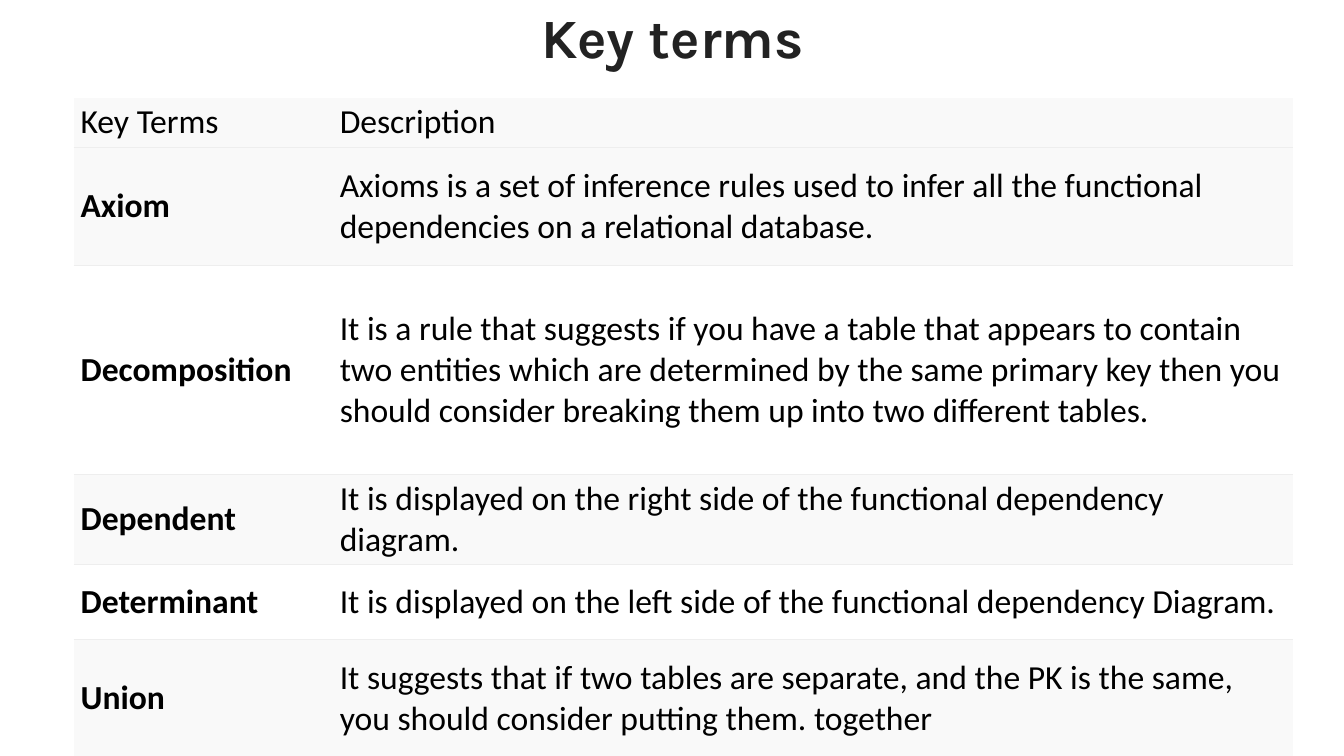
from lxml.etree import SubElement
from pptx import Presentation
from pptx.dml.color import RGBColor
from pptx.enum.text import MSO_ANCHOR, MSO_AUTO_SIZE, PP_ALIGN
from pptx.oxml import parse_xml
from pptx.oxml.ns import nsdecls, qn
from pptx.util import Inches, Pt

TITLE_COLOR = RGBColor(0x22, 0x22, 0x22)
TEXT_COLOR = RGBColor(0x00, 0x00, 0x00)
RULE_COLOR = RGBColor(0xEE, 0xEE, 0xEE)
SHADED = RGBColor(0xF9, 0xF9, 0xF9)
PLAIN = RGBColor(0xFF, 0xFF, 0xFF)

SLIDE_WIDTH, SLIDE_HEIGHT = 13.33, 7.5
TITLE_BOX = (0.92, 0.4, 11.5, 0.73)
TABLE_BOX = (0.73, 0.97, 12.09, 6.21)
TERM_SHARE = 0.2126  # share of the table's width
RULE_WIDTH = Pt(0.5)

# term, description, row height, fill
TERMS = [
    ("Key Terms", "Description", 0.3, SHADED),
    ("Axiom", "Axioms is a set of inference rules used to infer all the functional "
     "dependencies on a relational database.", 1.18, SHADED),
    ("Decomposition", "It is a rule that suggests if you have a table that appears to "
     "contain two entities which are determined by the same primary key then you should "
     "consider breaking them up into two different tables.", 2.07, PLAIN),
    ("Dependent", "It is displayed on the right side of the functional dependency "
     "diagram.", 0.74, SHADED),
    ("Determinant", "It is displayed on the left side of the functional dependency "
     "Diagram.", 0.74, PLAIN),
    ("Union", "It suggests that if two tables are separate, and the PK is the same, you "
     "should consider putting them. together", 1.18, SHADED),
]


def add_run(para, text, font, size, color, bold):
    span = para.add_run()
    span.text = text
    span.font.name = font
    span.font.size = Pt(size)
    span.font.bold = bold
    span.font.color.rgb = color


def set_borders(cell, ruled_sides):
    """Rule the given sides (T, B) and clear the others."""
    properties = cell._tc.get_or_add_tcPr()
    for position, side in enumerate("LRTB"):
        line = parse_xml(f'<a:ln{side} {nsdecls("a")} w="{RULE_WIDTH}"/>')
        if side in ruled_sides:
            fill = SubElement(line, qn("a:solidFill"))
            SubElement(fill, qn("a:srgbClr"), val=str(RULE_COLOR))
        else:
            SubElement(line, qn("a:noFill"))
        properties.insert(position, line)


def place_title(page, box, text):
    title = page.shapes.title
    title.left, title.top, title.width, title.height = map(Inches, box)
    frame = title.text_frame
    frame.auto_size = MSO_AUTO_SIZE.NONE
    frame.word_wrap = True
    frame.vertical_anchor = MSO_ANCHOR.MIDDLE
    para = frame.paragraphs[0]
    para.alignment = PP_ALIGN.CENTER
    para.line_spacing = 0.9
    add_run(para, text, "Karla", 39.6, TITLE_COLOR, True)
    para.add_line_break()


def fill_cell(cell, text, bold, fill, ruled_sides):
    cell.margin_left = cell.margin_right = Inches(0.07)
    cell.margin_top = cell.margin_bottom = Inches(0.04)
    cell.vertical_anchor = MSO_ANCHOR.MIDDLE
    cell.fill.solid()
    cell.fill.fore_color.rgb = fill
    set_borders(cell, ruled_sides)
    add_run(cell.text_frame.paragraphs[0], text, "Calibri", 24, TEXT_COLOR, bold)


def place_terms(page, box, terms):
    table = page.shapes.add_table(len(terms), 2, *map(Inches, box)).table
    width = box[2]
    table.columns[0].width = Inches(width * TERM_SHARE)
    table.columns[1].width = Inches(width * (1 - TERM_SHARE))
    last = len(terms) - 1
    for index, (term, description, height, fill) in enumerate(terms):
        table.rows[index].height = Inches(height)
        ruled_sides = {0: "B", last: "T"}.get(index, "TB")
        fill_cell(table.cell(index, 0), term, index > 0, fill, ruled_sides)
        fill_cell(table.cell(index, 1), description, False, fill, ruled_sides)


def main():
    deck = Presentation()
    deck.slide_width, deck.slide_height = Inches(SLIDE_WIDTH), Inches(SLIDE_HEIGHT)
    page = deck.slides.add_slide(deck.slide_layouts[5])
    place_title(page, TITLE_BOX, "Key terms")
    place_terms(page, TABLE_BOX, TERMS)
    deck.save("out.pptx")


if __name__ == "__main__":
    main()
